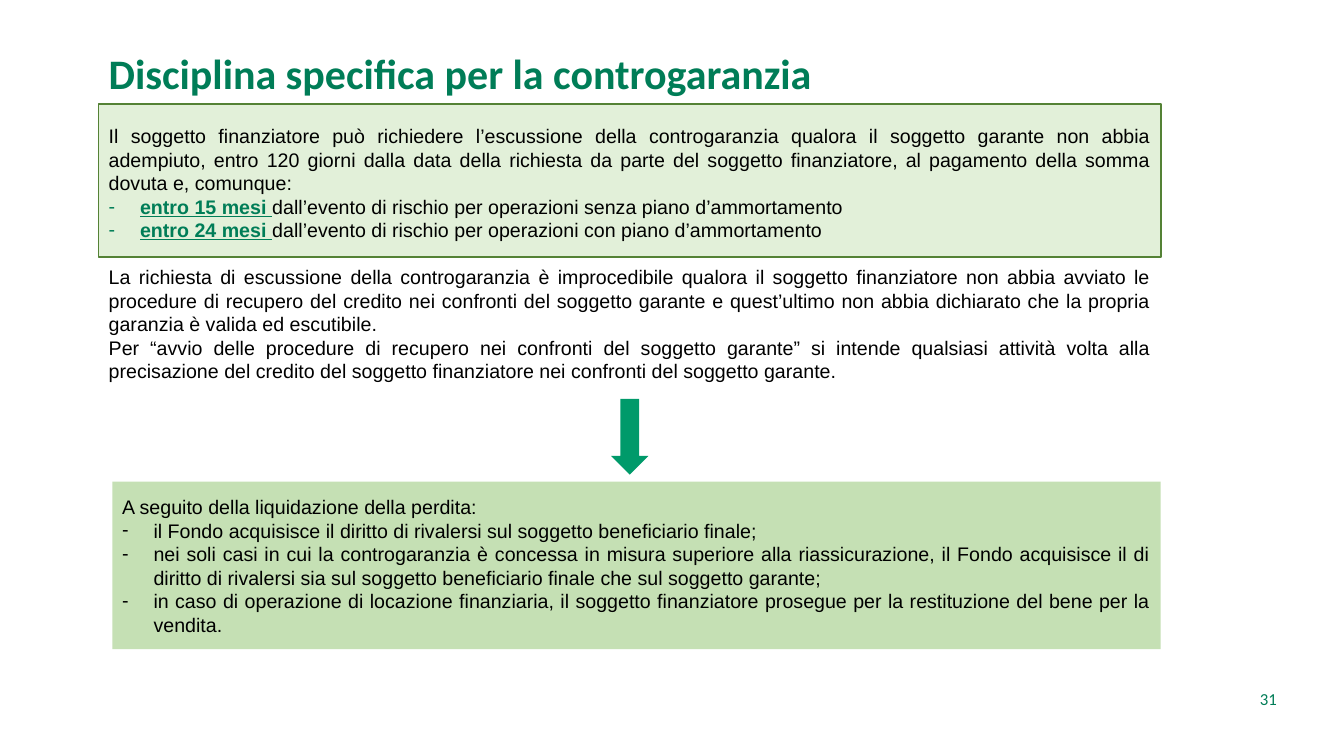
from lxml.etree import SubElement
from pptx import Presentation
from pptx.dml.color import RGBColor as Rgb
from pptx.enum.shapes import MSO_SHAPE as Kind
from pptx.enum.text import MSO_ANCHOR as Anchor, PP_ALIGN as Align
from pptx.oxml.ns import qn
from pptx.util import Cm, Pt

HUES = {"title": "007D57", "text": "000000", "pale": "E2F0D9",
        "edge": "548235", "mid": "C5E0B4", "arrow": "009A6A"}
DENT = Cm(0.79)

TERMS = [
    ("entro 15 mesi ", "dall’evento di rischio per operazioni senza piano d’ammortamento"),
    ("entro 24 mesi ", "dall’evento di rischio per operazioni con piano d’ammortamento"),
]
CLAIM = ("Il soggetto finanziatore può richiedere l’escussione della controgaranzia "
         "qualora il soggetto garante non abbia adempiuto, entro 120 giorni dalla data "
         "della richiesta da parte del soggetto finanziatore, al pagamento della somma "
         "dovuta e, comunque:")
LIMIT = ("La richiesta di escussione della controgaranzia è improcedibile qualora il "
         "soggetto finanziatore non abbia avviato le procedure di recupero del credito "
         "nei confronti del soggetto garante e quest’ultimo non abbia dichiarato che la "
         "propria garanzia è valida ed escutibile.")
SENSE = ("Per “avvio delle procedure di recupero nei confronti del soggetto garante” si "
         "intende qualsiasi attività volta alla precisazione del credito del soggetto "
         "finanziatore nei confronti del soggetto garante.")
AFTER = "A seguito della liquidazione della perdita:"
RIGHTS = [
    "il Fondo acquisisce il diritto di rivalersi sul soggetto beneficiario finale;",
    "nei soli casi in cui la controgaranzia è concessa in misura superiore alla "
    "riassicurazione, il Fondo acquisisce il di diritto di rivalersi sia sul soggetto "
    "beneficiario finale che sul soggetto garante;",
    "in caso di operazione di locazione finanziaria, il soggetto finanziatore prosegue "
    "per la restituzione del bene per la vendita.",
]


def tint(name):
    """Return the named colour."""
    return Rgb.from_string(HUES[name])


def style(para, size, face, hue, align):
    """Set the font and alignment of a paragraph."""
    para.alignment = align
    para.font.size, para.font.name = Pt(size), face
    para.font.color.rgb = tint(hue)


def block(slide, kind, box, fill, edge=None):
    """Draw a flat filled shape."""
    shape = slide.shapes.add_shape(kind, *map(Cm, box))
    shape.shadow.inherit = False
    shape.fill.solid()
    shape.fill.fore_color.rgb = tint(fill)
    if edge:
        shape.line.color.rgb = tint(edge)
        shape.line.width = Pt(1)
    else:
        shape.line.fill.background()
    return shape


def field(slide, box):
    """Add a wrapping text box and return its frame."""
    frame = slide.shapes.add_textbox(*map(Cm, box)).text_frame
    frame.word_wrap = True
    return frame


def add(frame, text, dash=False, lead=""):
    """Append a justified paragraph, with an optional dash and bold lead."""
    para = frame.paragraphs[0]
    if para.runs:
        para = frame.add_paragraph()
    if dash:
        props = para._p.get_or_add_pPr()
        props.set("marL", str(DENT))
        props.set("indent", str(-DENT))
        SubElement(props, qn("a:buFont"), typeface="Arial")
        SubElement(props, qn("a:buChar"), char="-")
    style(para, 14, "Arial", "text", Align.JUSTIFY)
    if lead:
        run = para.add_run()
        run.text = lead
        run.font.bold = run.font.underline = True
        run.font.color.rgb = tint("title")
    para.add_run().text = text
    return para


def head(slide, box):
    """Write the slide title."""
    para = field(slide, box).paragraphs[0]
    para.text = "Disciplina specifica per la controgaranzia"
    style(para, 30, "Calibri", "title", Align.LEFT)
    para.font.bold = True


def rules(slide, box):
    """Place the pale panel with the terms, and the limits under it."""
    left, top, width, height = box
    block(slide, Kind.RECTANGLE, box, "pale", "edge")
    frame = field(slide, (left, top + 0.38, width, 6.83))
    add(frame, CLAIM)
    for lead, text in TERMS:
        add(frame, text, True, lead)
    add(frame, LIMIT).space_before = Pt(16.8)
    add(frame, SENSE)


def effects(slide, box):
    """Place the arrow and the panel of effects below it."""
    left, top, width, height = box
    block(slide, Kind.DOWN_ARROW, (left + 12.57, top - 2.09, 0.94, 1.91), "arrow")
    frame = block(slide, Kind.RECTANGLE, box, "mid").text_frame
    frame.word_wrap = True
    frame.vertical_anchor = Anchor.MIDDLE
    add(frame, AFTER)
    for text in RIGHTS:
        add(frame, text, True)


def folio(slide, box):
    """Write the page number."""
    frame = field(slide, box)
    frame.vertical_anchor = Anchor.BOTTOM
    para = frame.paragraphs[0]
    para.text = "31"
    style(para, 12, "Calibri", "title", Align.RIGHT)


def main():
    """Build and save the slide."""
    deck = Presentation()
    deck.slide_width, deck.slide_height = Cm(33.87), Cm(19.05)
    slide = deck.slides.add_slide(deck.slide_layouts[6])
    head(slide, (2.49, 1.07, 28.42, 1.55))
    rules(slide, (2.49, 2.62, 26.77, 3.86))
    effects(slide, (2.83, 12.14, 26.42, 4.22))
    folio(slide, (29.97, 17.32, 2.46, 0.66))
    deck.save("out.pptx")


if __name__ == "__main__":
    main()
